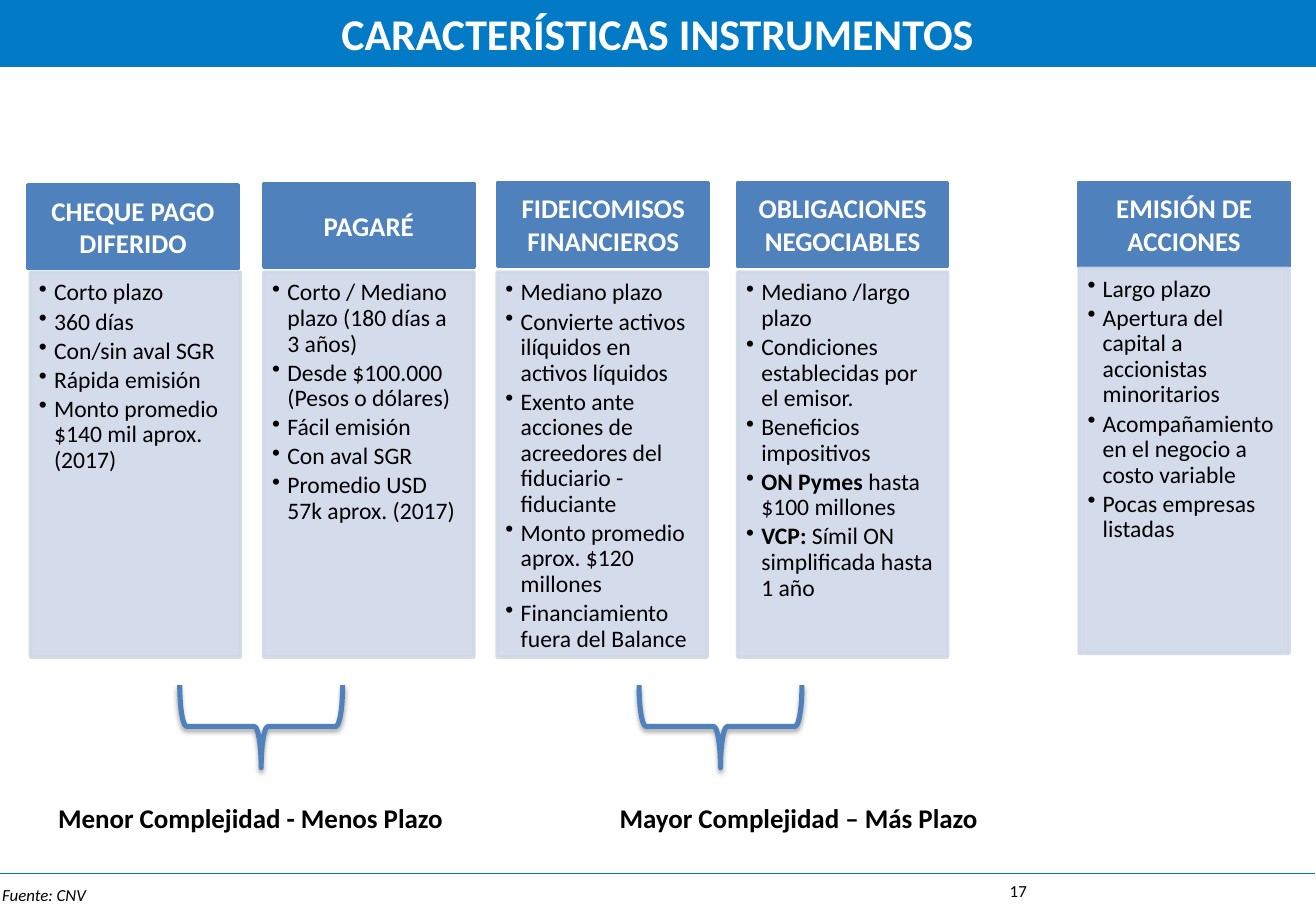
from lxml import etree
from pptx import Presentation
from pptx.dml.color import RGBColor
from pptx.enum.shapes import MSO_CONNECTOR, MSO_SHAPE
from pptx.enum.text import MSO_ANCHOR, PP_ALIGN
from pptx.oxml.ns import qn
from pptx.util import Pt

RECTANGLE, BRACE = MSO_SHAPE.RECTANGLE, MSO_SHAPE.LEFT_BRACE
STRAIGHT = MSO_CONNECTOR.STRAIGHT
TOP, MIDDLE = MSO_ANCHOR.TOP, MSO_ANCHOR.MIDDLE
LEFT, CENTER = PP_ALIGN.LEFT, PP_ALIGN.CENTER
PX = 9144
COLORS = {
    "title": "037AC6", "rule": "037AB5", "header": "4F81BD",
    "body": "D0D8E8", "white": "FFFFFF", "black": "000000",
}

presentation = Presentation()
presentation.slide_width, presentation.slide_height = 1083 * PX, 750 * PX
slide = presentation.slides.add_slide(presentation.slide_layouts[6])


def write(shape, paragraphs, size, color="black", align=LEFT, anchor=TOP,
          margins=(10, 5, 10, 5), wrap=True, italic=False, bullets=False):
    frame = shape.text_frame
    frame.word_wrap = wrap
    frame.vertical_anchor = anchor
    (frame.margin_left, frame.margin_top,
     frame.margin_right, frame.margin_bottom) = [m * PX for m in margins]
    for index, runs in enumerate(paragraphs):
        paragraph = frame.add_paragraph() if index else frame.paragraphs[0]
        paragraph.alignment = align
        if bullets:
            paragraph.line_spacing = 0.9
            paragraph.space_after = Pt(2.1)
            properties = paragraph._p.get_or_add_pPr()
            properties.set("marL", str(12 * PX + 4572))
            properties.set("indent", str(-12 * PX - 4572))
            etree.SubElement(properties, qn("a:buChar")).set("char", "•")
        for text, bold in runs:
            run = paragraph.add_run()
            run.text = text
            font = run.font
            font.name, font.size = "Calibri", Pt(size)
            font.bold, font.italic = bold, italic
            font.color.rgb = RGBColor.from_string(COLORS[color])


def add_box(left, top, width, height, color, alpha=None, border=True):
    shape = slide.shapes.add_shape(RECTANGLE, left * PX, top * PX, width * PX, height * PX)
    shape.shadow.inherit = False
    shape.fill.solid()
    shape.fill.fore_color.rgb = RGBColor.from_string(COLORS[color])
    if border:
        shape.line.color.rgb = RGBColor.from_string(COLORS[color])
        shape.line.width = Pt(2)
    else:
        shape.line.fill.background()
    if alpha:
        for tint in shape._element.spPr.iter(qn("a:srgbClr")):
            etree.SubElement(tint, qn("a:alpha")).set("val", str(alpha * 1000))
    return shape


rule = slide.shapes.add_connector(STRAIGHT, -1 * PX, 719 * PX, 1082 * PX, 719 * PX)
rule.line.color.rgb = RGBColor.from_string(COLORS["rule"])
rule.line.width = Pt(0.75)
etree.SubElement(rule._element.spPr, qn("a:effectLst"))

title = add_box(0, 0, 1083, 55, "title", border=False)
write(title, [[("CARACTERÍSTICAS INSTRUMENTOS", True)]], 26, "white", CENTER, MIDDLE)

instruments = [
    ("CHEQUE PAGO DIFERIDO", 23, 152, 25, 224, [
        [("Corto plazo", False)],
        [("360 días", False)],
        [("Con/sin aval SGR", False)],
        [("Rápida emisión", False)],
        [("Monto promedio $140 mil aprox. (2017)", False)]]),
    ("PAGARÉ", 217, 151, 217, 224, [
        [("Corto / Mediano plazo (180 días a 3 años)", False)],
        [("Desde $100.000 (Pesos o dólares)", False)],
        [("Fácil emisión", False)],
        [("Con aval SGR", False)],
        [("Promedio USD 57k aprox. (2017)", False)]]),
    ("FIDEICOMISOS FINANCIEROS", 410, 150, 409, 224, [
        [("Mediano plazo", False)],
        [("Convierte activos ilíquidos en activos líquidos", False)],
        [("Exento ante acciones de acreedores del fiduciario - fiduciante", False)],
        [("Monto promedio aprox. $120 millones", False)],
        [("Financiamiento fuera del Balance", False)]]),
    ("OBLIGACIONES NEGOCIABLES", 607, 150, 607, 224, [
        [("Mediano /largo plazo", False)],
        [("Condiciones establecidas por el emisor.", False)],
        [("Beneficios impositivos", False)],
        [("ON Pymes ", True), ("hasta $100 millones", False)],
        [("VCP: ", True), ("Símil ON simplificada hasta 1 año", False)]]),
    ("EMISIÓN DE ACCIONES", 888, 150, 888, 221, [
        [("Largo plazo", False)],
        [("Apertura del capital a accionistas minoritarios", False)],
        [("Acompañamiento en el negocio a costo variable", False)],
        [("Pocas empresas listadas", False)]]),
]
for name, header_left, header_top, body_left, body_top, features in instruments:
    header = add_box(header_left, header_top, 173, 69, "header")
    write(header, [[(name, True)]], 16, "white", CENTER, MIDDLE, (12, 7, 12, 7))
    body = add_box(body_left, body_top, 173, 317, "body", alpha=90)
    write(body, features, 14, margins=(7, 7, 9, 10), bullets=True)

for brace_left in (181, 559):
    brace = slide.shapes.add_shape(BRACE, brace_left * PX, 531 * PX, 68 * PX, 134 * PX)
    brace.rotation = 270
    brace.fill.background()
    brace.line.color.rgb = RGBColor.from_string(COLORS["header"])
    brace.line.width = Pt(3)
    brace.shadow.inherit = False
    effects = brace._element.spPr.find(qn("a:effectLst"))
    shadow = etree.SubElement(effects, qn("a:outerShdw"), blurRad=str(Pt(3.1)),
                              dist=str(Pt(1.8)), dir="5400000", rotWithShape="0")
    tint = etree.SubElement(shadow, qn("a:srgbClr"), val=COLORS["black"])
    etree.SubElement(tint, qn("a:alpha"), val="35000")

labels = [
    ("Menor Complejidad - Menos Plazo", 38, 655, 339, 37, 16, {}),
    ("Mayor Complejidad – Más Plazo", 500, 655, 331, 37, 16, {}),
    ("Fuente: CNV", -8, 723, 92, 27, 10, {"italic": True, "wrap": False}),
    ("17", 770, 720, 136, 27, 10, {"align": CENTER}),
]
for text, left, top, width, height, size, options in labels:
    label = slide.shapes.add_textbox(left * PX, top * PX, width * PX, height * PX)
    write(label, [[(text, size == 16)]], size, **options)

presentation.save("out.pptx")
